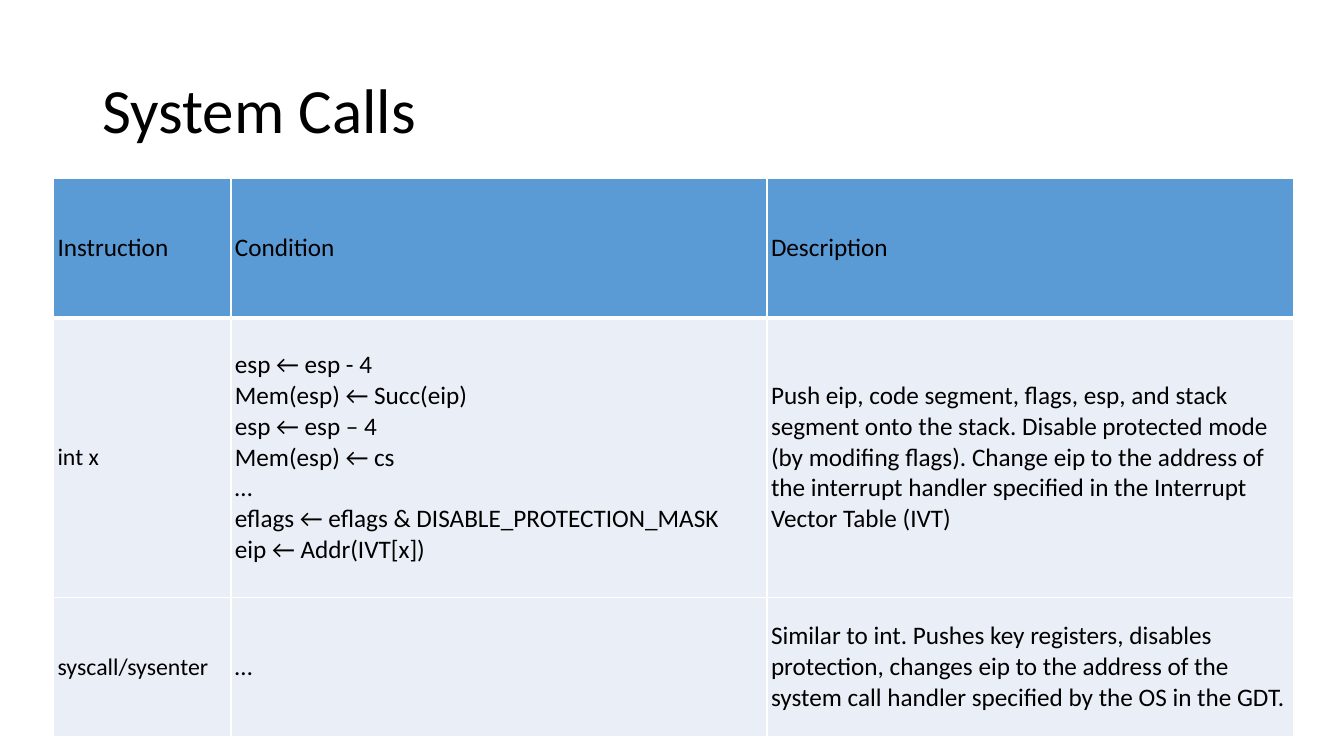
from lxml import etree
from pptx import Presentation
from pptx.dml.color import RGBColor
from pptx.enum.text import MSO_ANCHOR
from pptx.oxml.ns import qn
from pptx.util import Cm, Pt

MIDDLE = MSO_ANCHOR.MIDDLE
BLACK, WHITE, BLUE, PALE = "000000", "FFFFFF", "5B9BD5", "EAEFF7"


def style_text(text_frame, size):
    for paragraph in text_frame.paragraphs:
        for run in paragraph.runs:
            run.font.name = "Calibri"
            run.font.size = Pt(size)
            run.font.color.rgb = RGBColor.from_string(BLACK)


def add_border(cell, side, width):
    properties = cell._tc.get_or_add_tcPr()
    line = etree.SubElement(properties, qn(f"a:{side}"), w=str(Pt(width)))
    fill = etree.SubElement(line, qn("a:solidFill"))
    etree.SubElement(fill, qn("a:srgbClr"), val=WHITE)


presentation = Presentation()
presentation.slide_width = Cm(33.87)
presentation.slide_height = Cm(19.05)
slide = presentation.slides.add_slide(presentation.slide_layouts[6])

title = slide.shapes.add_textbox(Cm(2.33), Cm(1.01), Cm(29.21), Cm(3.68))
title.text_frame.word_wrap = True
title.text_frame.vertical_anchor = MIDDLE
title.text_frame.text = "System Calls"
title.text_frame.paragraphs[0].line_spacing = 0.9
style_text(title.text_frame, 45)

rows = [
    ["Instruction", "Condition", "Description"],
    [
        "int x",
        "esp ← esp - 4\vMem(esp) ← Succ(eip)\n"
        "esp ← esp – 4\n"
        "Mem(esp) ← cs\n"
        "…\n"
        "eflags ← eflags & DISABLE_PROTECTION_MASK\veip ← Addr(IVT[x])",
        "Push eip, code segment, flags, esp, and stack segment onto the stack. "
        "Disable protected mode (by modifing flags). Change eip to the address of "
        "the interrupt handler specified in the Interrupt Vector Table (IVT)",
    ],
    [
        "syscall/sysenter",
        "…",
        "Similar to int. Pushes key registers, disables protection, changes eip to "
        "the address of the system call handler specified by the OS in the GDT.",
    ],
]
column_widths = [4.47, 13.51, 13.28]
row_heights = [3.51, 7.04, 3.51]

table = slide.shapes.add_table(
    len(rows), len(column_widths), Cm(1.35), Cm(4.5),
    Cm(sum(column_widths)), Cm(sum(row_heights)),
).table
for column, width in zip(table.columns, column_widths):
    column.width = Cm(width)
for row, height in zip(table.rows, row_heights):
    row.height = Cm(height)

for row_index, texts in enumerate(rows):
    for column_index, text in enumerate(texts):
        cell = table.cell(row_index, column_index)
        cell.vertical_anchor = MIDDLE
        cell.margin_left = cell.margin_right = Cm(0.1)
        cell.margin_top = cell.margin_bottom = Cm(0.1)
        cell.text_frame.text = text
        style_text(cell.text_frame, 17 if row_index and column_index == 0 else 18)
        for side in ("lnL", "lnR"):
            add_border(cell, side, 1)
        add_border(cell, "lnT", 3 if row_index == 1 else 1)
        add_border(cell, "lnB", 3 if row_index == 0 else 1)
        cell.fill.solid()
        cell.fill.fore_color.rgb = RGBColor.from_string(PALE if row_index else BLUE)

presentation.save("out.pptx")
